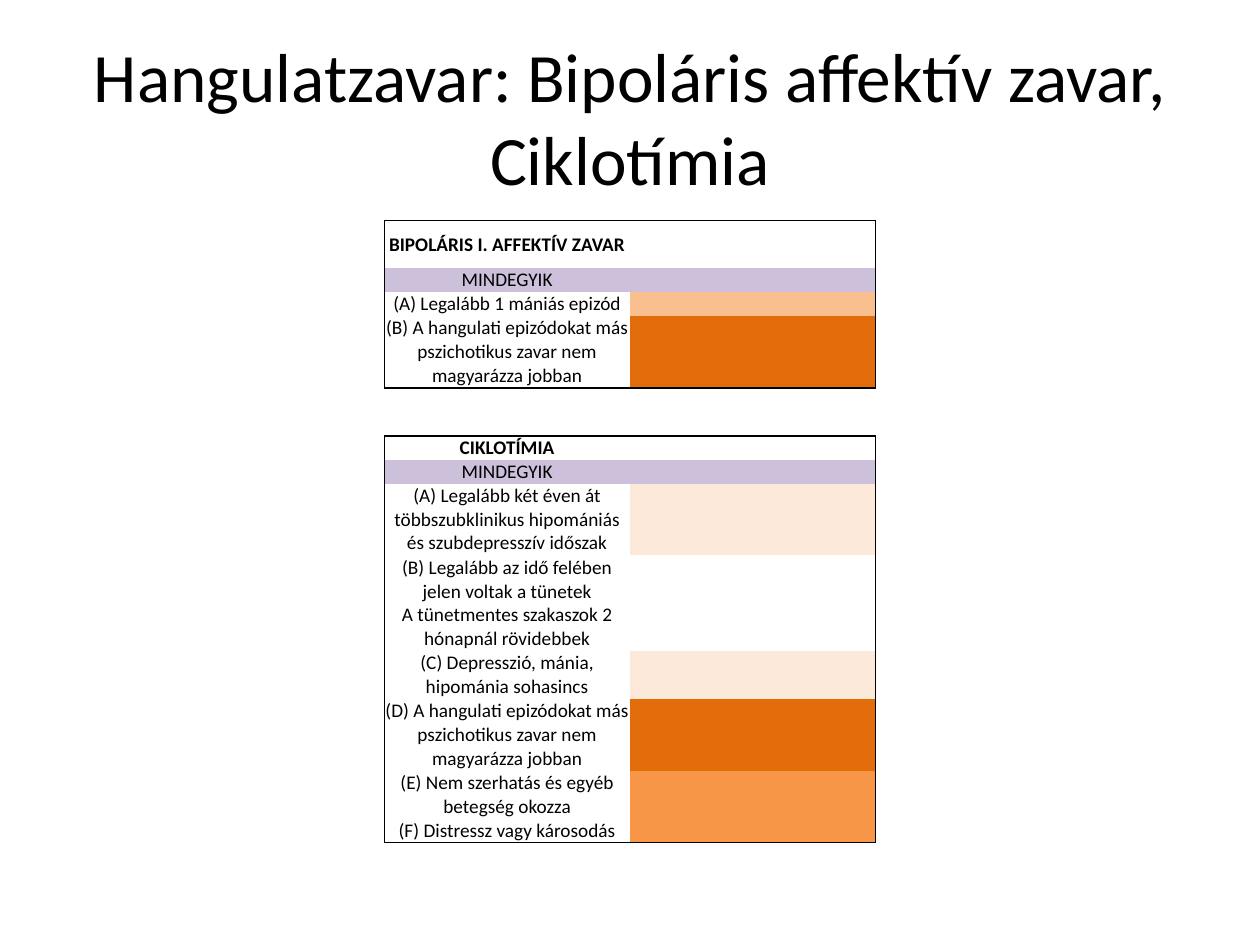
"""Build a slide on diagnostic criteria of mood disorders."""
from dataclasses import dataclass

from lxml import etree
from pptx import Presentation, util as u
from pptx.dml.color import RGBColor
from pptx.enum import text
from pptx.oxml.ns import qn


@dataclass(frozen=True)
class Theme:
    """Colours, font and type sizes of the slide."""
    font: str = "Calibri"
    title_size: float = 39.6
    body_size: float = 11
    ink: str = "000000"
    lilac: str = "CCC0DA"
    pale: str = "FDE9D9"
    light: str = "FABF8F"
    medium: str = "F79646"
    strong: str = "E26B0A"
    border: float = 1


THEME = Theme()
WIDTH, HEIGHT = u.Inches(10), u.Inches(7.5)
LINE_HEIGHT = u.Inches(0.19)

BIPOLAR = [
    ("BIPOLÁRIS I. AFFEKTÍV ZAVAR", 2, None),
    ("MINDEGYIK", 1, THEME.lilac),
    ("(A) Legalább 1 mániás epizód", 1, THEME.light),
    ("(B) A hangulati epizódokat más pszichotikus zavar nem magyarázza jobban", 3, THEME.strong),
]
GAP = [("", 1, None)] * 2
CYCLOTHYMIA = [
    ("CIKLOTÍMIA", 1, None),
    ("MINDEGYIK", 1, THEME.lilac),
    ("(A) Legalább két éven át többszubklinikus hipomániás és szubdepresszív időszak", 3, THEME.pale),
    ("(B) Legalább az idő felében jelen voltak a tünetek\n"
     "A tünetmentes szakaszok 2 hónapnál rövidebbek", 4, None),
    ("(C) Depresszió, mánia, hipománia sohasincs", 2, THEME.pale),
    ("(D) A hangulati epizódokat más pszichotikus zavar nem magyarázza jobban", 3, THEME.strong),
    ("(E) Nem szerhatás és egyéb betegség okozza", 2, THEME.medium),
    ("(F) Distressz vagy károsodás", 1, THEME.medium),
]


def place(shape, left, top, width, height):
    """Position a shape by shares of the slide's size."""
    shape.left, shape.top = int(left * WIDTH), int(top * HEIGHT)
    shape.width, shape.height = int(width * WIDTH), int(height * HEIGHT)


def style_font(font, size, bold=False):
    """Apply the theme's font and ink."""
    font.name, font.size, font.bold = THEME.font, u.Pt(size), bold
    font.color.rgb = RGBColor.from_string(THEME.ink)


def write(paragraph, wording, size, bold=False):
    """Write centred wording, with a line break at each newline."""
    paragraph.alignment = text.PP_ALIGN.CENTER
    for index, line in enumerate(wording.split("\n")):
        if index:
            paragraph.add_line_break()
        run = paragraph.add_run()
        run.text = line
        style_font(run.font, size, bold)


def set_borders(cell, drawn):
    """Draw the named edges of a cell and clear the others."""
    properties = cell._tc.get_or_add_tcPr()
    for edge in "LRTB":
        line = etree.SubElement(properties, qn(f"a:ln{edge}"), w=str(u.Pt(THEME.border)))
        if edge in drawn:
            fill = etree.SubElement(line, qn("a:solidFill"))
            etree.SubElement(fill, qn("a:srgbClr"), val=THEME.ink)
        else:
            etree.SubElement(line, qn("a:noFill"))


def fill_cell(cell, wording, colour, bold, drawn):
    """Give a cell its borders, fill and wording."""
    cell.margin_left = cell.margin_right = cell.margin_top = cell.margin_bottom = 0
    cell.vertical_anchor = text.MSO_ANCHOR.MIDDLE
    set_borders(cell, drawn)
    if colour:
        cell.fill.solid()
        cell.fill.fore_color.rgb = RGBColor.from_string(colour)
    else:
        cell.fill.background()
    paragraph = cell.text_frame.paragraphs[0]
    style_font(paragraph.font, THEME.body_size)
    if wording:
        write(paragraph, wording, THEME.body_size, bold)


def add_title(slide, wording):
    """Place and write the slide's title."""
    title = slide.shapes.title
    place(title, 0.05, 0.04, 0.9, 1 / 6)
    title.text_frame.vertical_anchor = text.MSO_ANCHOR.MIDDLE
    write(title.text_frame.paragraphs[0], wording, THEME.title_size)


def add_criteria(slide, blocks):
    """Add one table whose filled blocks are framed and headed in bold."""
    rows = [(row, block is not GAP, index == 0)
            for block in blocks for index, row in enumerate(block)]
    framed = [False] + [in_frame for _, in_frame, _ in rows] + [False]
    frame = slide.shapes.add_table(len(rows), 2, 0, 0, WIDTH, HEIGHT)
    place(frame, 0.305, 1.75 / 7.5, 0.39, 0.66)
    table = frame.table
    table.first_row = table.horz_banding = False
    for column in table.columns:
        column.width = int(0.195 * WIDTH)
    for index, ((wording, lines, colour), in_frame, heading) in enumerate(rows):
        table.rows[index].height = lines * LINE_HEIGHT
        ends = "T" * (framed[index] != in_frame) + "B" * (framed[index + 2] != in_frame)
        left, right = ("L", "R") if in_frame else ("", "")
        label_colour = colour if colour == THEME.lilac else None
        fill_cell(table.cell(index, 0), wording, label_colour, heading, ends + left)
        fill_cell(table.cell(index, 1), "", colour, False, ends + right)


def main():
    """Build and save the slide."""
    presentation = Presentation()
    presentation.slide_width, presentation.slide_height = WIDTH, HEIGHT
    slide = presentation.slides.add_slide(presentation.slide_layouts[5])
    add_title(slide, "Hangulatzavar: Bipoláris affektív zavar, Ciklotímia")
    add_criteria(slide, [BIPOLAR, GAP, CYCLOTHYMIA])
    presentation.save("out.pptx")


if __name__ == "__main__":
    main()
